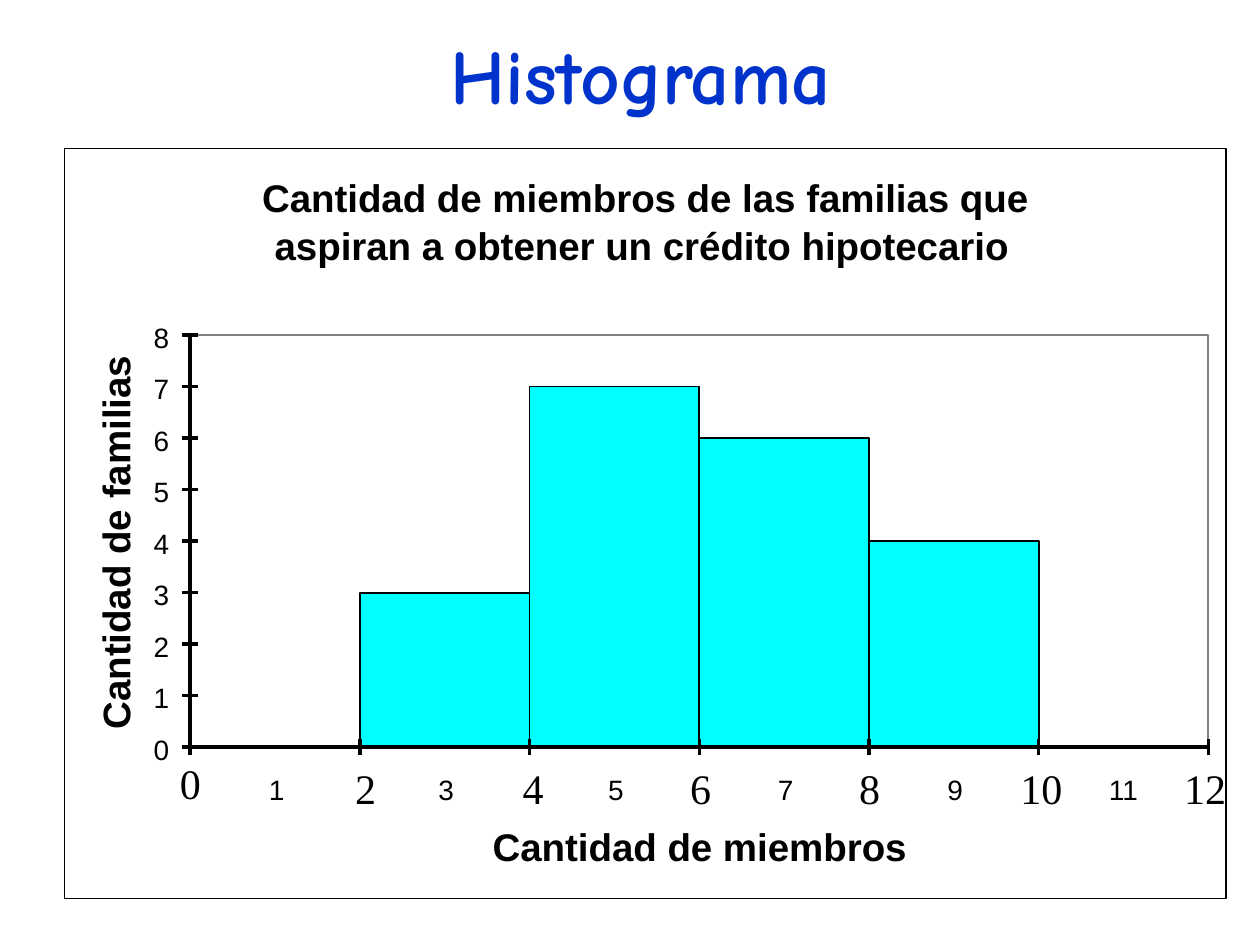
from dataclasses import dataclass
from typing import Optional

from lxml.etree import SubElement
from pptx import Presentation
from pptx.dml.color import RGBColor
from pptx.enum.shapes import MSO_CONNECTOR, MSO_SHAPE
from pptx.enum.text import MSO_ANCHOR, MSO_AUTO_SIZE, PP_ALIGN
from pptx.oxml.ns import qn
from pptx.util import Inches, Pt

BLACK = RGBColor(0x00, 0x00, 0x00)
WHITE = RGBColor(0xFF, 0xFF, 0xFF)
GRAY = RGBColor(0x80, 0x80, 0x80)
CYAN = RGBColor(0x00, 0xFF, 0xFF)
BLUE = RGBColor(0x00, 0x33, 0xCC)

TITLE_FONT = {"name": "Comic Neue", "size": Pt(44), "bold": True}
HEADING_FONT = {"name": "Arial", "size": Pt(22), "bold": True}
LABEL_FONT = {"name": "Arial", "size": Pt(16), "bold": False}
LIMIT_FONT = {"name": "Times New Roman", "size": Pt(24), "bold": False}

PLOT_LEFT, PLOT_TOP, PLOT_WIDTH, PLOT_HEIGHT = 1.51, 2.66, 8.08, 3.27
X_MAX, Y_MAX, CLASS_WIDTH = 12, 8, 2
PLOT_RIGHT, PLOT_BOTTOM = PLOT_LEFT + PLOT_WIDTH, PLOT_TOP + PLOT_HEIGHT
TICK = 0.065


@dataclass
class Box:
    left: float
    top: float
    width: float
    height: float
    line: RGBColor = BLACK
    weight: float = 1
    fill: Optional[RGBColor] = None


@dataclass
class Label:
    text: str
    left: float
    top: float
    width: float
    height: float
    font: dict
    inset: float = 0
    rotation: float = 0


@dataclass
class Bar:
    start: int
    families: int


BARS = [Bar(2, 3), Bar(4, 7), Bar(6, 6), Bar(8, 4)]
HEADINGS = [
    Label("Cantidad de miembros de las familias que", 2.08, 1.38, 6.31, 0.41, HEADING_FONT),
    Label("aspiran a obtener un crédito hipotecario", 2.18, 1.76, 5.97, 0.41, HEADING_FONT),
    Label("Cantidad de miembros", 3.91, 6.53, 3.44, 0.41, HEADING_FONT),
    Label("Cantidad de familias", -0.62, 4.03, 3.11, 0.41, HEADING_FONT, rotation=270),
]
LIMIT_LEFTS = [1.33, 2.72, 4.05, 5.38, 6.72, 8, 9.3]


def x_at(members: float) -> float:
    return PLOT_LEFT + members * PLOT_WIDTH / X_MAX


def y_at(families: float) -> float:
    return PLOT_BOTTOM - families * PLOT_HEIGHT / Y_MAX


def set_font(font, values: dict, color: RGBColor) -> None:
    for key, value in values.items():
        setattr(font, key, value)
    font.color.rgb = color


def draw_box(s, box: Box) -> None:
    sp = s.shapes.add_shape(MSO_SHAPE.RECTANGLE, Inches(box.left), Inches(box.top),
                            Inches(box.width), Inches(box.height))
    sp.shadow.inherit = False
    sp.line.color.rgb = box.line
    sp.line.width = Pt(box.weight)
    if box.fill is None:
        sp.fill.background()
    else:
        sp.fill.solid()
        sp.fill.fore_color.rgb = box.fill


def draw_line(s, x1: float, y1: float, x2: float, y2: float) -> None:
    cxn = s.shapes.add_connector(MSO_CONNECTOR.STRAIGHT, Inches(x1), Inches(y1),
                                 Inches(x2), Inches(y2))
    cxn.line.color.rgb = BLACK
    cxn.line.width = Pt(0)
    SubElement(cxn._element.spPr, qn("a:effectLst"))


def draw_label(s, label: Label) -> None:
    sp = s.shapes.add_textbox(Inches(label.left), Inches(label.top),
                              Inches(label.width), Inches(label.height))
    sp.rotation = label.rotation
    tf = sp.text_frame
    frame = {
        "word_wrap": False,
        "auto_size": MSO_AUTO_SIZE.SHAPE_TO_FIT_TEXT,
        "margin_left": Inches(label.inset),
        "margin_right": Inches(label.inset),
        "margin_top": Inches(label.inset / 2),
        "margin_bottom": Inches(label.inset / 2),
    }
    for key, value in frame.items():
        setattr(tf, key, value)
    r = tf.paragraphs[0].add_run()
    r.text = label.text
    set_font(r.font, label.font, BLACK)


def draw_title(s, text: str) -> None:
    sp = s.shapes.title
    place = {"left": Inches(2.67), "top": Inches(0.17),
             "width": Inches(4.83), "height": Inches(0.83)}
    for key, value in place.items():
        setattr(sp, key, value)
    tf = sp.text_frame
    tf.word_wrap = True
    tf.auto_size = MSO_AUTO_SIZE.SHAPE_TO_FIT_TEXT
    tf.vertical_anchor = MSO_ANCHOR.TOP
    p = tf.paragraphs[0]
    p.alignment = PP_ALIGN.CENTER
    r = p.add_run()
    r.text = text
    set_font(r.font, TITLE_FONT, BLUE)


def draw_axes(s) -> None:
    draw_line(s, PLOT_LEFT, PLOT_TOP, PLOT_LEFT, PLOT_BOTTOM)
    for families in range(Y_MAX + 1):
        y = y_at(families)
        draw_line(s, PLOT_LEFT - TICK, y, PLOT_LEFT + TICK, y)
        draw_label(s, Label(str(families), 1.22, y - 0.12, 0.24, 0.32, LABEL_FONT))

    draw_line(s, PLOT_LEFT, PLOT_BOTTOM, PLOT_RIGHT, PLOT_BOTTOM)
    for members, left in zip(range(0, X_MAX + 1, CLASS_WIDTH), LIMIT_LEFTS):
        x = x_at(members)
        draw_line(s, x, PLOT_BOTTOM + TICK, x, PLOT_BOTTOM - TICK)
        width = 0.37 if members < 10 else 0.53
        top = 6 if members else 5.96
        draw_label(s, Label(str(members), left, top, width, 0.5, LIMIT_FONT, inset=0.1))

    for members in range(1, X_MAX, CLASS_WIDTH):
        width = 0.24 if members < 10 else 0.37
        left = x_at(members) + 0.07 - width / 2
        draw_label(s, Label(str(members), left, 6.13, width, 0.32, LABEL_FONT))


def main() -> None:
    prs = Presentation()
    prs.slide_width, prs.slide_height = Inches(10), Inches(7.5)
    s = prs.slides.add_slide(prs.slide_layouts[5])
    draw_title(s, "Histograma")
    draw_box(s, Box(0.51, 1.18, 9.22, 5.95, weight=0, fill=WHITE))
    draw_box(s, Box(PLOT_LEFT, PLOT_TOP, PLOT_WIDTH, PLOT_HEIGHT, line=GRAY))
    for bar in BARS:
        left, top = x_at(bar.start), y_at(bar.families)
        width = x_at(bar.start + CLASS_WIDTH) - left
        draw_box(s, Box(left, top, width, PLOT_BOTTOM - top, fill=CYAN))
    draw_axes(s)
    for heading in HEADINGS:
        draw_label(s, heading)
    prs.save("out.pptx")


if __name__ == "__main__":
    main()
